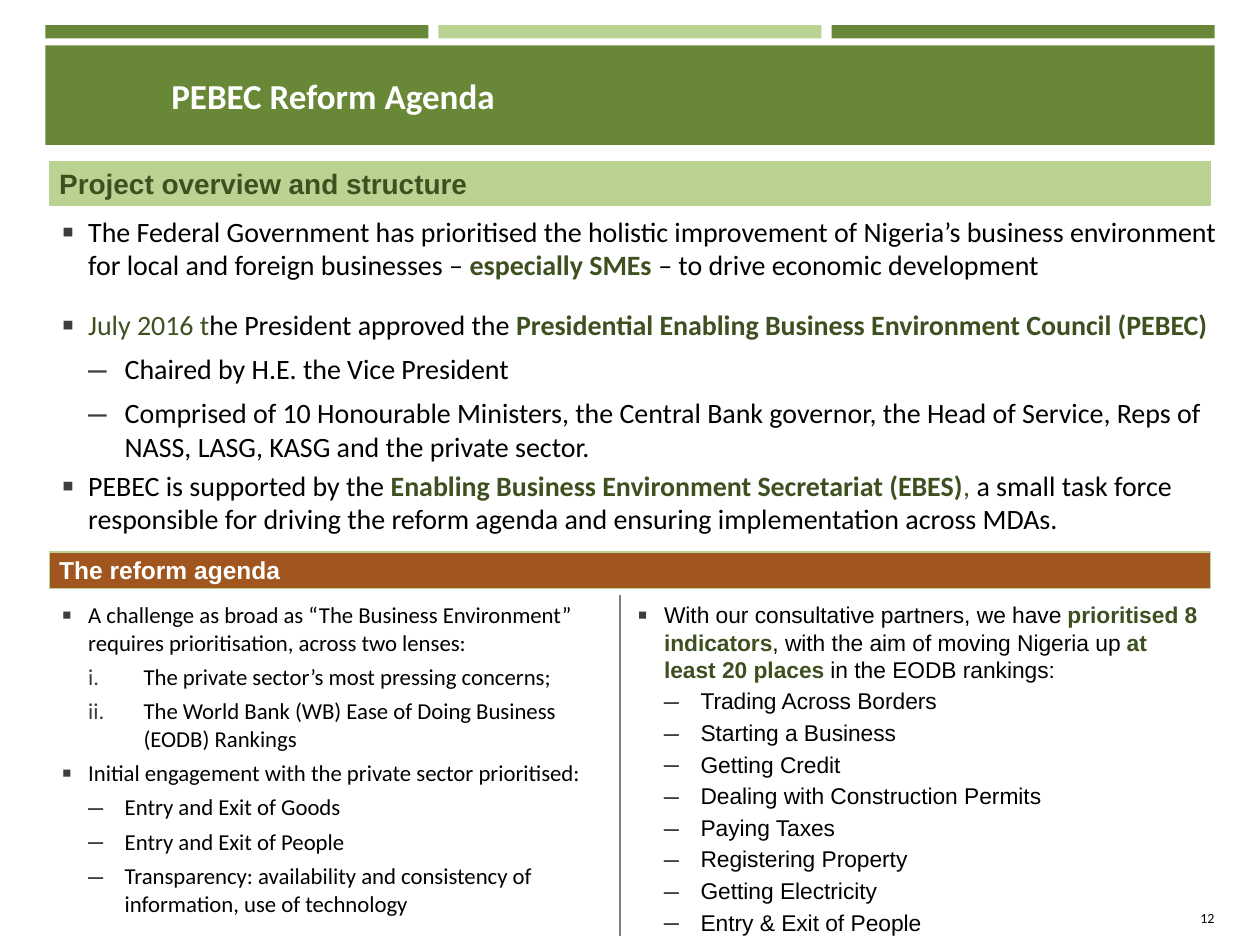
from collections import namedtuple
from dataclasses import dataclass

from lxml.etree import SubElement
from pptx import Presentation
from pptx.dml.color import RGBColor
from pptx.enum.shapes import MSO_CONNECTOR as Line, MSO_SHAPE as Preset
from pptx.enum.text import MSO_ANCHOR as Anchor, PP_ALIGN as Align
from pptx.oxml.ns import qn
from pptx.util import Inches, Pt

Box = namedtuple("Box", "left top width height")
COLUMN, ROW = Inches(10) // 100, Inches(7.5) // 100


@dataclass(frozen=True)
class Theme:
    """Colours, fonts and type sizes of the slide."""
    green: str = "698837"
    pale: str = "BAD392"
    deep: str = "3E5020"
    rust: str = "A1561F"
    white: str = "FFFFFF"
    black: str = "000000"
    marker: str = "3D3D3D"
    rule: str = "808080"
    sans: str = "Calibri"
    plain: str = "Arial"
    title: int = 20
    body: int = 16
    banner: int = 14
    detail: int = 13
    footer: int = 8


THEME = Theme()
STYLES = {"text": (THEME.black, False), "accent": (THEME.deep, False), "strong": (THEME.deep, True)}
BULLETS = {
    "square": dict(level=0, left=2.2, hang=-2.1, size=125, tag="a:buChar", mark={"char": "▪"}),
    "dash": dict(level=1, left=5.1, hang=-2.9, size=120, tag="a:buChar", mark={"char": "–"}),
    "roman": dict(level=1, left=6.6, hang=-4.4, size=100, tag="a:buAutoNum", mark={"type": "romanLcPeriod"}),
}

OVERVIEW = [
    ("square", 0, 3, [
        ("text", "The Federal Government has prioritised the holistic improvement of Nigeria’s business "
                 "environment for local and foreign businesses – "),
        ("strong", "especially SMEs "), ("text", "– to drive economic development")]),
    ("square", 12, 3, [
        ("accent", "July 2016 t"), ("text", "he President approved the "),
        ("strong", "Presidential Enabling Business Environment Council (PEBEC)")]),
    ("dash", 3, 3, [("text", "Chaired by H.E. the Vice President")]),
    ("dash", 3, 3, [
        ("text", "Comprised of 10 Honourable Ministers, the Central Bank governor, the Head of Service, "
                 "Reps of NASS, LASG, KASG and the private sector.")]),
    ("square", 0, 0, [
        ("text", "PEBEC is supported by the "),
        ("strong", "Enabling Business Environment Secretariat (EBES)"), ("accent", ", "),
        ("text", "a small task force responsible for driving the reform agenda and ensuring "
                 "implementation across MDAs.")]),
]
LENSES = [
    ("square", 0, 2, [("text", "A challenge as broad as “The Business Environment” requires "
                               "prioritisation, across two lenses:")]),
    *[("roman", 2, 2, [("text", lens)]) for lens in (
        "The private sector’s most pressing concerns;",
        "The World Bank (WB) Ease of Doing Business (EODB) Rankings")],
    ("square", 2, 2, [("text", "Initial engagement with the private sector prioritised:")]),
    *[("dash", 2, 2, [("text", priority)]) for priority in (
        "Entry and Exit of Goods", "Entry and Exit of People",
        "Transparency: availability and consistency of information, use of technology")],
]
INDICATORS = [
    ("square", 0, 2, [
        ("text", "With our consultative partners, we have "), ("strong", "prioritised 8 indicators"),
        ("text", ", with the aim of moving Nigeria up "), ("strong", "at least 20 places"),
        ("text", " in the EODB rankings:")]),
    *[("dash", 2, 2, [("text", indicator)]) for indicator in (
        "Trading Across Borders", "Starting a Business", "Getting Credit",
        "Dealing with Construction Permits", "Paying Taxes", "Registering Property",
        "Getting Electricity", "Entry & Exit of People")],
]


def apply(target, **values):
    """Set every given attribute on the target."""
    for name, value in values.items():
        setattr(target, name, value)


def emu(box):
    """Turn columns and rows into slide lengths."""
    return [round(share * unit) for share, unit in zip(box, (COLUMN, ROW) * 2)]


def add_words(paragraph, words, size, font, colour, bold=False):
    """Append one formatted run."""
    run = paragraph.add_run()
    run.text = words
    apply(run.font, size=Pt(size), name=font, bold=bold)
    run.font.color.rgb = RGBColor.from_string(colour)


def add_bar(slide, box, fill, edge=None):
    """Draw a filled rectangle with an optional edge."""
    bar = slide.shapes.add_shape(Preset.RECTANGLE, *emu(box))
    bar.shadow.inherit = False
    bar.fill.solid()
    bar.fill.fore_color.rgb = RGBColor.from_string(fill)
    if edge:
        bar.line.color.rgb = RGBColor.from_string(edge)
        bar.line.width = Pt(0.75)
    else:
        bar.line.fill.background()
    return bar


def add_frame(slide, box, anchor=Anchor.TOP, wrap=True):
    """Place a text box without margins."""
    frame = slide.shapes.add_textbox(*emu(box)).text_frame
    apply(frame, margin_left=0, margin_right=0, margin_top=0, margin_bottom=0,
          vertical_anchor=anchor, word_wrap=wrap)
    return frame


def add_bullet(paragraph, level, left, hang, size, tag, mark):
    """Give a paragraph its indent and marker."""
    paragraph.level = level
    props = paragraph._p.get_or_add_pPr()
    props.set("marL", str(round(left * COLUMN)))
    props.set("indent", str(round(hang * COLUMN)))
    SubElement(SubElement(props, qn("a:buClr")), qn("a:srgbClr"), val=THEME.marker)
    SubElement(props, qn("a:buSzPct"), val=str(size * 1000))
    SubElement(props, qn("a:buFont"), typeface=THEME.plain)
    SubElement(props, qn(tag), **mark)


def bullet_list(slide, box, items, size, font, dash_spacing=1.0):
    """Fill a box with bulleted paragraphs."""
    frame = add_frame(slide, box)
    for index, (bullet, before, after, runs) in enumerate(items):
        paragraph = frame.add_paragraph() if index else frame.paragraphs[0]
        add_bullet(paragraph, **BULLETS[bullet])
        apply(paragraph, space_before=Pt(before), space_after=Pt(after),
              line_spacing=dash_spacing if bullet == "dash" else 1.0)
        for style, words in runs:
            add_words(paragraph, words, size, font, *STYLES[style])


def header(slide, box, title):
    """Draw three stripes above the title band."""
    gap = 0.8
    width = (box.width - 2 * gap) / 3
    for index, fill in enumerate((THEME.green, THEME.pale, THEME.green)):
        add_bar(slide, Box(box.left + index * (width + gap), box.top, width, 1.4), fill)
    band = Box(box.left, box.top + 2.13, box.width, box.height - 2.13)
    add_bar(slide, band, THEME.green)
    frame = add_frame(slide, band._replace(left=band.left + 10, width=band.width - 11.4), Anchor.MIDDLE)
    add_words(frame.paragraphs[0], title, THEME.title, THEME.sans, THEME.white, True)


def banner(slide, box, heading, fill, colour, size):
    """Draw a section heading bar."""
    frame = add_bar(slide, box, fill, THEME.pale).text_frame
    apply(frame, margin_left=Inches(0.08), margin_right=Inches(0.08), vertical_anchor=Anchor.MIDDLE,
          word_wrap=True)
    frame.paragraphs[0].alignment = Align.LEFT
    add_words(frame.paragraphs[0], heading, size, THEME.plain, colour, True)


def overview(slide, box):
    """Place the project overview section."""
    banner(slide, box._replace(height=4.67), "Project overview and structure",
           THEME.pale, THEME.deep, THEME.body)
    bullet_list(slide, Box(box.left + 0.9, box.top + 5.6, box.width + 1, box.height - 5.6),
                OVERVIEW, THEME.body, THEME.sans)


def agenda(slide, box):
    """Place the reform agenda in two divided columns."""
    banner(slide, box._replace(height=3.87), "The reform agenda", THEME.rust, THEME.white, THEME.banner)
    top, height = box.top + 5.2, box.height - 5.2
    bullet_list(slide, Box(box.left + 0.9, top, 43.8, height), LENSES, THEME.detail, THEME.sans)
    bullet_list(slide, Box(box.left + 46.6, top, 44.8, height), INDICATORS, THEME.detail, THEME.plain, 0.9)
    middle = box.left + 45.3
    divider = slide.shapes.add_connector(
        Line.STRAIGHT, *emu((middle, box.top + 4.53, middle, box.top + 40.67)))
    divider.line.color.rgb = RGBColor.from_string(THEME.rule)
    divider.line.width = Pt(0.75)
    SubElement(divider._element.spPr, qn("a:effectLst"))


def page_number(slide, box, number):
    """Place the page number at the lower right."""
    paragraph = add_frame(slide, box, Anchor.MIDDLE, False).paragraphs[0]
    paragraph.alignment = Align.RIGHT
    add_words(paragraph, number, THEME.footer, THEME.sans, THEME.black)


def main():
    """Build and save the slide."""
    deck = Presentation()
    apply(deck, slide_width=100 * COLUMN, slide_height=100 * ROW)
    slide = deck.slides.add_slide(deck.slide_layouts[6])
    header(slide, Box(3.6, 2.67, 92.8, 12.67), "PEBEC Reform Agenda")
    overview(slide, Box(3.9, 17.07, 92.2, 39.87))
    agenda(slide, Box(3.9, 58.4, 92.2, 41.6))
    page_number(slide, Box(95, 96.27, 1.4, 1.73), "12")
    deck.save("out.pptx")


if __name__ == "__main__":
    main()
